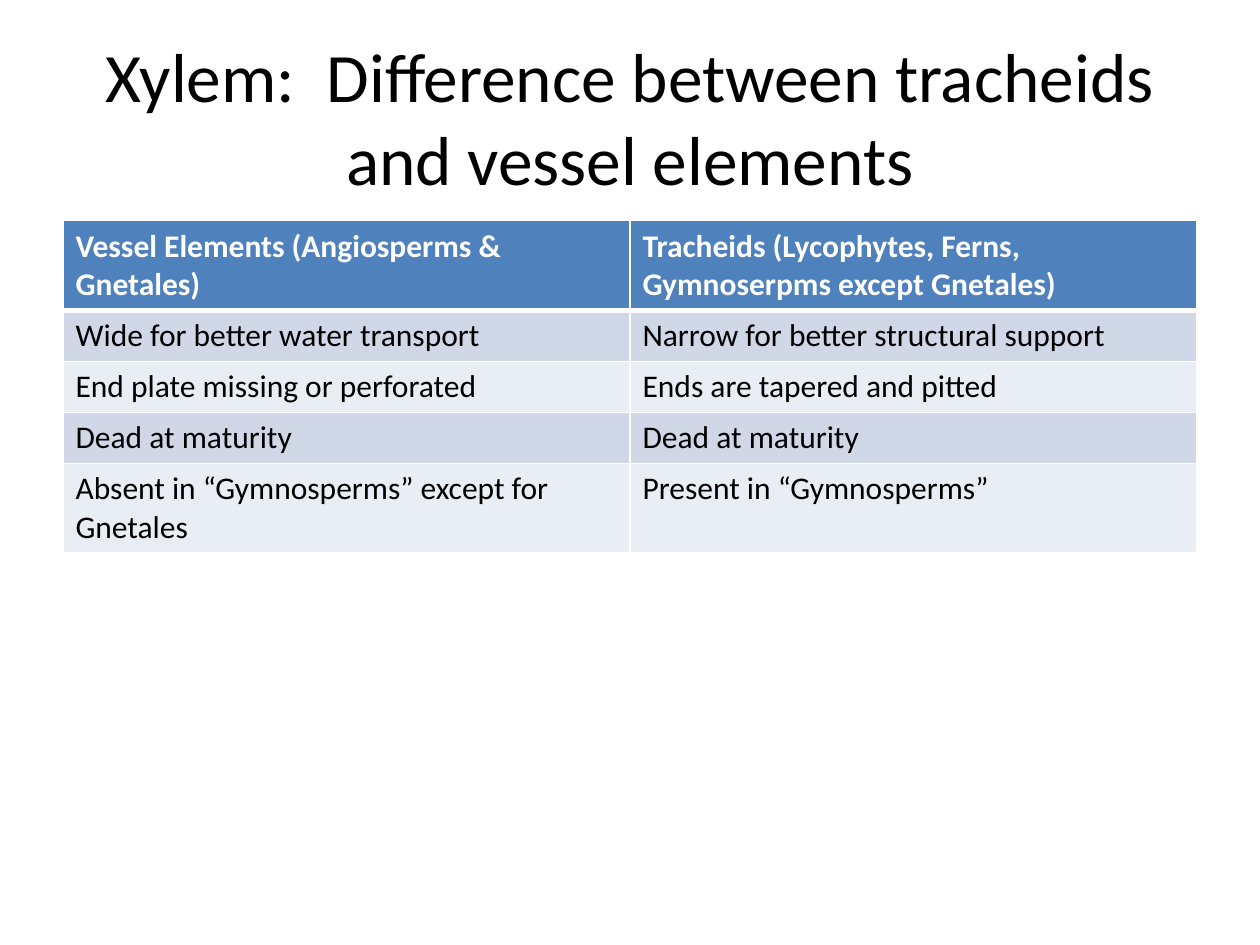
"""Build a slide comparing vessel elements with tracheids in a table."""
from typing import NamedTuple

from lxml import etree
from pptx import Presentation
from pptx import util as u
from pptx.dml.color import RGBColor
from pptx.enum import text
from pptx.oxml import ns

FONT = "Calibri"
WHITE, BLACK, BLUE = "FFFFFF", "000000", "4F81BD"
BANDS = ("D0D8E8", "E9EDF4")
LEFT, WIDTH = u.Cm(1.27), u.Cm(22.86)
ROW_HEIGHT = u.Cm(1.03)


class Row(NamedTuple):
    vessel: str
    tracheid: str


ROWS = [
    Row("Vessel Elements (Angiosperms & Gnetales)",
        "Tracheids (Lycophytes, Ferns, Gymnoserpms except Gnetales)"),
    Row("Wide for better water transport", "Narrow for better structural support"),
    Row("End plate missing or perforated", "Ends are tapered and pitted"),
    Row("Dead at maturity", "Dead at maturity"),
    Row("Absent in “Gymnosperms” except for Gnetales", "Present in “Gymnosperms”"),
]


def rgb(value: str) -> RGBColor:
    return RGBColor.from_string(value)


def add_run(p, content: str, size: float, color: str, bold: bool = False) -> None:
    r = p.add_run()
    r.text = content
    r.font.name = FONT
    r.font.size = u.Pt(size)
    r.font.bold = bold
    r.font.color.rgb = rgb(color)


def add_border(cell, side: str, width: float) -> None:
    tc_pr = cell._tc.get_or_add_tcPr()
    ln = etree.SubElement(tc_pr, ns.qn(f"a:ln{side}"), w=str(u.Pt(width)))
    fill = etree.SubElement(ln, ns.qn("a:solidFill"))
    etree.SubElement(fill, ns.qn("a:srgbClr"), val=WHITE)


def fill_cell(cell, content: str, row: int) -> None:
    header = row == 0
    for side in "LRTB":
        thick = (header and side == "B") or (row == 1 and side == "T")
        add_border(cell, side, 3 if thick else 1)
    cell.fill.solid()
    cell.fill.fore_color.rgb = rgb(BLUE if header else BANDS[(row - 1) % 2])
    add_run(cell.text_frame.paragraphs[0], content, 18,
            WHITE if header else BLACK, bold=header)


def add_title(s, content: str) -> None:
    sp = s.shapes.title
    sp.left, sp.top, sp.width, sp.height = LEFT, u.Cm(0.76), WIDTH, u.Cm(3.18)
    tf = sp.text_frame
    tf.word_wrap = True
    tf.auto_size = text.MSO_AUTO_SIZE.NONE
    tf.vertical_anchor = text.MSO_ANCHOR.MIDDLE
    p = tf.paragraphs[0]
    p.alignment = text.PP_ALIGN.CENTER
    add_run(p, content, 39.6, BLACK)


def add_comparison(s, rows: list[Row]) -> None:
    frame = s.shapes.add_table(len(rows), len(Row._fields), LEFT, u.Cm(4.45),
                               WIDTH, ROW_HEIGHT * len(rows))
    for i, row in enumerate(rows):
        for j, content in enumerate(row):
            fill_cell(frame.table.cell(i, j), content, i)


def main() -> None:
    prs = Presentation()
    prs.slide_width, prs.slide_height = u.Cm(25.4), u.Cm(19.05)
    s = prs.slides.add_slide(prs.slide_layouts[5])
    add_title(s, "Xylem:  Difference between tracheids and vessel elements")
    add_comparison(s, ROWS)
    prs.save("out.pptx")


if __name__ == "__main__":
    main()
